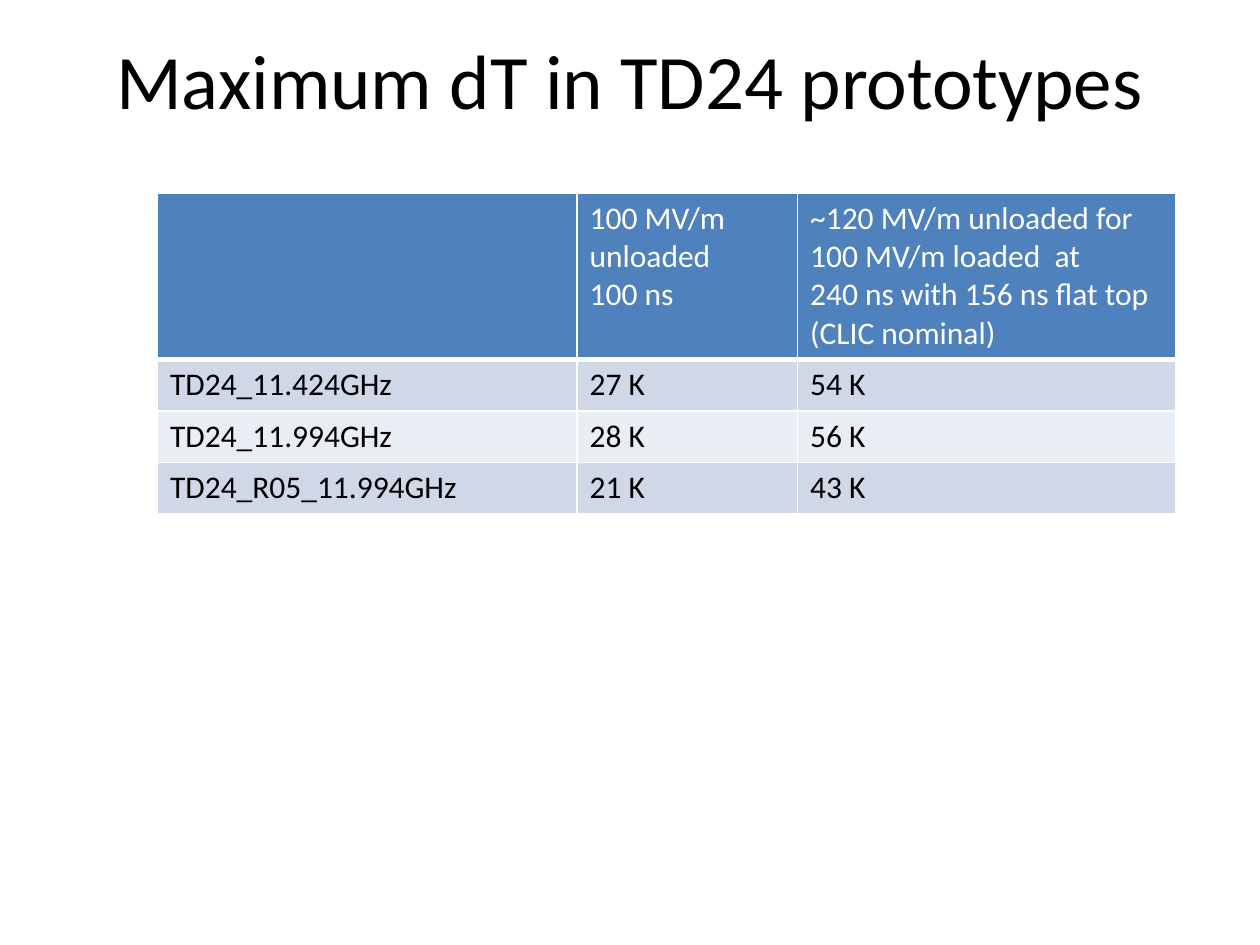
"""Build the slide on maximum temperature rise in TD24 prototypes."""
from dataclasses import dataclass

from lxml import etree
from pptx import Presentation
from pptx.dml.color import RGBColor
from pptx.enum import text
from pptx.oxml import ns
from pptx.util import Inches, Pt


@dataclass(frozen=True)
class Theme:
    font: str = "Calibri"
    title_size: int = 44
    cell_size: int = 18
    ink: str = "000000"
    paper: str = "FFFFFF"
    header: str = "4F81BD"
    bands: tuple[str, ...] = ("D0D8E8", "E9EDF4")
    rule: int = 1
    header_rule: int = 3


@dataclass(frozen=True)
class Row:
    cells: tuple[tuple[str, ...], ...]
    height: float
    fill: str
    ink: str
    bottom: int


THEME = Theme()
COLUMNS = (3.33, 1.75, 3)
HEADINGS = (
    (),
    ("100 MV/m unloaded", "100 ns"),
    ("~120 MV/m unloaded for 100 MV/m loaded  at",
     "240 ns with 156 ns flat top (CLIC nominal)"),
)
RESULTS = (
    ("TD24_11.424GHz", "27 K", "54 K"),
    ("TD24_11.994GHz", "28 K", "56 K"),
    ("TD24_R05_11.994GHz", "21 K", "43 K"),
)


def add_span(para, wording: str, size: int, color: str) -> None:
    span = para.add_run()
    span.text = wording
    span.font.name = THEME.font
    span.font.size = Pt(size)
    span.font.bold = False
    span.font.color.rgb = RGBColor.from_string(color)


def add_border(cell, side: str, width: int) -> None:
    properties = cell._tc.get_or_add_tcPr()
    line = etree.SubElement(properties, ns.qn(f"a:ln{side}"), w=str(Pt(width)))
    fill = etree.SubElement(line, ns.qn("a:solidFill"))
    etree.SubElement(fill, ns.qn("a:srgbClr"), val=THEME.paper)


def fill_cell(cell, paragraphs: tuple[str, ...], row: Row) -> None:
    for side in "LRT":
        add_border(cell, side, THEME.rule)
    add_border(cell, "B", row.bottom)
    cell.fill.solid()
    cell.fill.fore_color.rgb = RGBColor.from_string(row.fill)
    frame = cell.text_frame
    for index, wording in enumerate(paragraphs):
        para = frame.add_paragraph() if index else frame.paragraphs[0]
        add_span(para, wording, THEME.cell_size, row.ink)


def add_title(page, wording: str) -> None:
    box = page.shapes.title
    box.left, box.top = Inches(0.5), Inches(0)
    box.width, box.height = Inches(9), Inches(1.25)
    frame = box.text_frame
    frame.word_wrap = True
    frame.vertical_anchor = text.MSO_ANCHOR.MIDDLE
    para = frame.paragraphs[0]
    para.alignment = text.PP_ALIGN.CENTER
    add_span(para, wording, THEME.title_size, THEME.ink)


def add_results(page, rows: list[Row]) -> None:
    table = page.shapes.add_table(
        len(rows), len(COLUMNS), Inches(1.25), Inches(1.53),
        Inches(sum(COLUMNS)), Inches(sum(row.height for row in rows)),
    ).table
    for column, width in zip(table.columns, COLUMNS):
        column.width = Inches(width)
    for line, row in zip(table.rows, rows):
        line.height = Inches(row.height)
        for cell, paragraphs in zip(line.cells, row.cells):
            fill_cell(cell, paragraphs, row)


def main() -> None:
    deck = Presentation()
    deck.slide_width, deck.slide_height = Inches(10), Inches(7.5)
    page = deck.slides.add_slide(deck.slide_layouts[5])
    add_title(page, "Maximum dT in TD24 prototypes")
    rows = [Row(HEADINGS, 1.31, THEME.header, THEME.paper, THEME.header_rule)]
    for index, values in enumerate(RESULTS):
        band = THEME.bands[index % len(THEME.bands)]
        cells = tuple((value,) for value in values)
        rows.append(Row(cells, 0.41, band, THEME.ink, THEME.rule))
    add_results(page, rows)
    deck.save("out.pptx")


if __name__ == "__main__":
    main()
